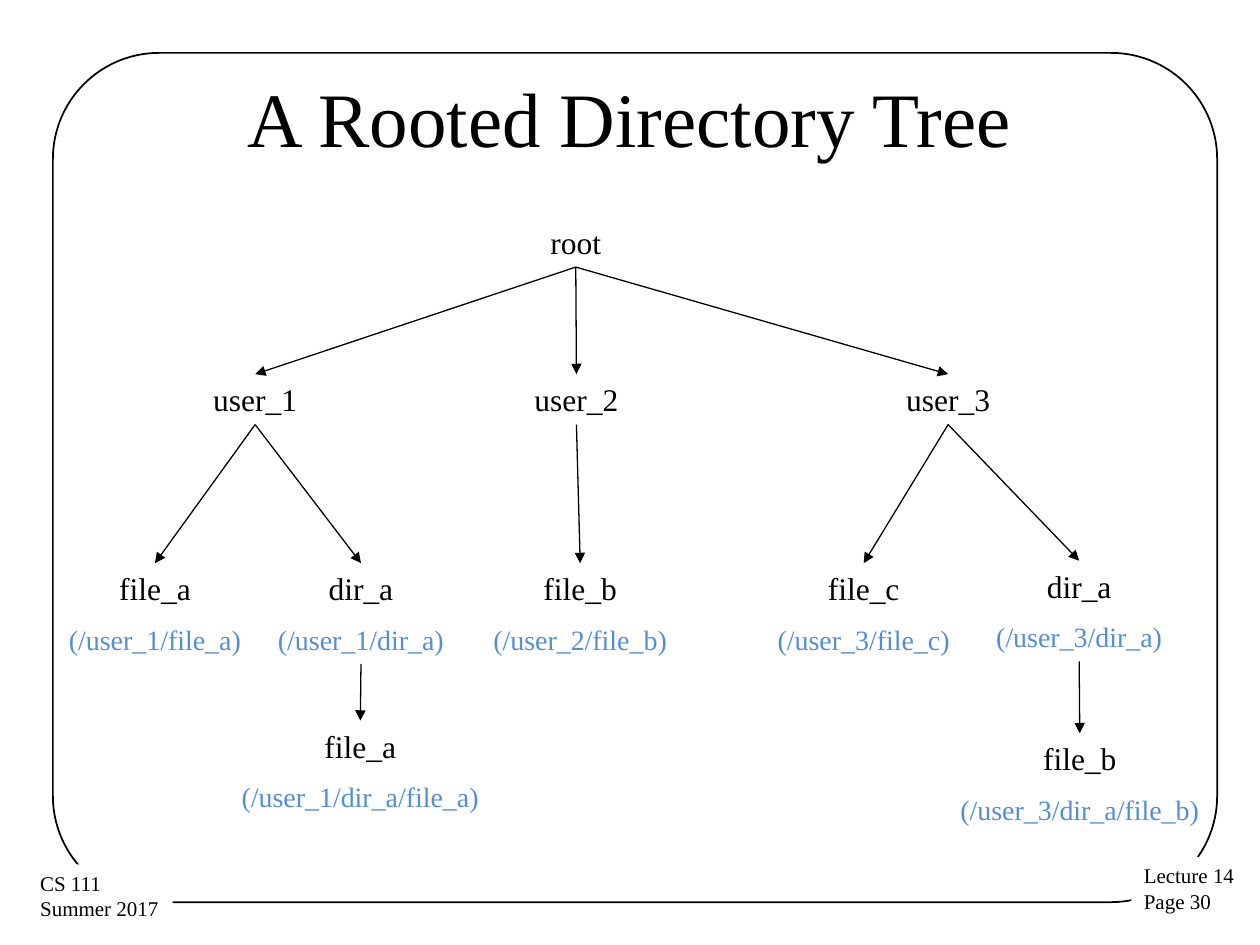
from pptx import Presentation
from pptx.dml.color import RGBColor
from pptx.enum.shapes import MSO_CONNECTOR, MSO_SHAPE
from pptx.enum.text import MSO_ANCHOR, MSO_AUTO_SIZE, PP_ALIGN
from pptx.oxml.ns import qn
from pptx.util import Inches, Pt
from lxml import etree

LINE = MSO_CONNECTOR.STRAIGHT
ROUND = MSO_SHAPE.ROUNDED_RECTANGLE
CENTER = PP_ALIGN.CENTER
MIDDLE = MSO_ANCHOR.MIDDLE
GROW = MSO_AUTO_SIZE.SHAPE_TO_FIT_TEXT
BOTTOM, TOP = 2, 0
FONT = "Times New Roman"
BLACK, BLUE, WHITE = "000000", "558ED5", "FFFFFF"

TITLE = "A Rooted Directory Tree"
FOOTERS = [
    ((8.98, 6.8, 0.93, 0.51), ["Lecture 14", "Page 30"]),
    ((0.22, 6.86, 1.15, 0.51), ["CS 111", "Summer 2017"]),
]
# path: (left, top, width); a node's parent is the path above it
NODES = {
    "": (4.11, 1.72, 0.92),
    "/user_1": (1.44, 2.97, 1.17),
    "/user_2": (3.99, 2.97, 1.17),
    "/user_3": (6.94, 2.97, 1.17),
    "/user_1/file_a": (0.19, 4.47, 2.08),
    "/user_1/dir_a": (2.03, 4.47, 1.67),
    "/user_2/file_b": (3.69, 4.47, 1.83),
    "/user_3/file_c": (5.94, 4.47, 1.83),
    "/user_3/dir_a": (7.69, 4.45, 1.75),
    "/user_1/dir_a/file_a": (1.36, 5.72, 3),
    "/user_3/dir_a/file_b": (7.36, 5.82, 2.42),
}


def color(code):
    return RGBColor.from_string(code)


def style(para, size, code=BLACK):
    para.font.name = FONT
    para.font.size = Pt(size)
    para.font.color.rgb = color(code)


def add_footer(slide, box, lines):
    shape = slide.shapes.add_textbox(*map(Inches, box))
    shape.fill.solid()
    shape.fill.fore_color.rgb = color(WHITE)
    frame = shape.text_frame
    frame.word_wrap = False
    frame.auto_size = GROW
    frame.text = "\n".join(lines)
    for para in frame.paragraphs:
        style(para, 12)


def add_node(slide, route, left, top, width):
    name = route.split("/")[-1] or "root"
    deep = route.count("/") > 1
    height = 0.8 if deep else 0.4
    shape = slide.shapes.add_textbox(*map(Inches, (left, top, width, height)))
    frame = shape.text_frame
    frame.word_wrap = True
    para = frame.paragraphs[0]
    para.text = name
    para.alignment = CENTER
    style(para, 18)
    if deep:
        para = frame.add_paragraph()
        para.text = f"({route})"
        para.alignment = CENTER
        para.space_before = Pt(8.5)
        style(para, 16, BLUE)
    return shape


def add_arrow(slide, parent, child):
    arrow = slide.shapes.add_connector(LINE, 0, 0, 0, 0)
    arrow.begin_connect(parent, BOTTOM)
    arrow.end_connect(child, TOP)
    arrow.line.color.rgb = color(BLACK)
    arrow.line.width = Pt(0.75)
    etree.SubElement(arrow.line._get_or_add_ln(), qn("a:tailEnd"), type="triangle")
    etree.SubElement(arrow._element.spPr, qn("a:effectLst"))


def main():
    prs = Presentation()
    prs.slide_width, prs.slide_height = Inches(10), Inches(7.5)
    slide = prs.slides.add_slide(prs.slide_layouts[5])

    title = slide.shapes.title
    title.left, title.top = Inches(0.5), Inches(0.3)
    title.width, title.height = Inches(9), Inches(1.25)
    title.text_frame.text = TITLE
    title.text_frame.vertical_anchor = MIDDLE
    para = title.text_frame.paragraphs[0]
    para.alignment = CENTER
    style(para, 44)

    border = slide.shapes.add_shape(ROUND, *map(Inches, (0.42, 0.42, 9.24, 6.74)))
    border.adjustments[0] = 0.125
    border.shadow.inherit = False
    border.fill.background()
    border.line.color.rgb = color(BLACK)
    border.line.width = Pt(1)

    for box, lines in FOOTERS:
        add_footer(slide, box, lines)

    nodes = {route: add_node(slide, route, *place) for route, place in NODES.items()}
    for route, child in nodes.items():
        if route:
            add_arrow(slide, nodes[route.rpartition("/")[0]], child)

    prs.save("out.pptx")


if __name__ == "__main__":
    main()
